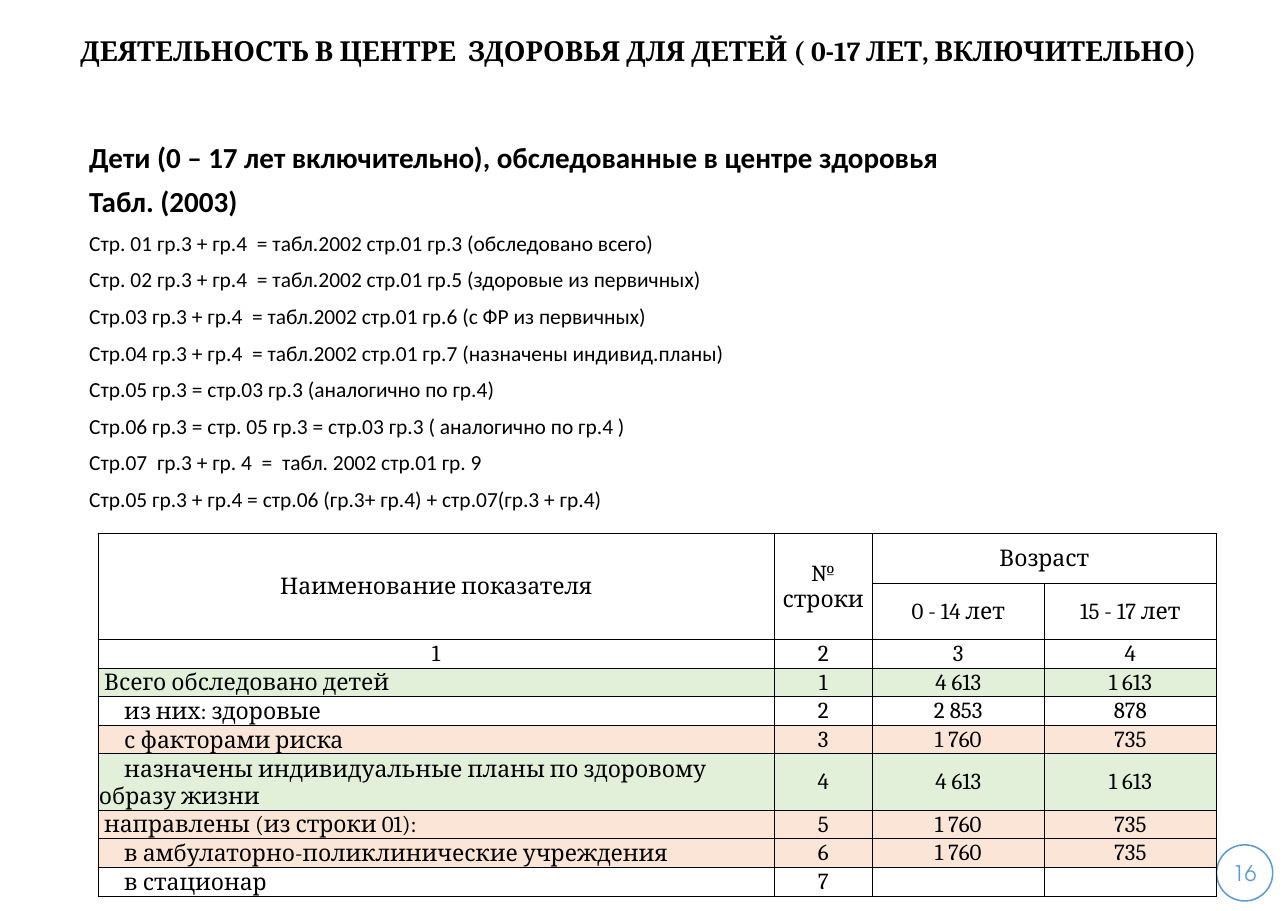
from dataclasses import dataclass

import lxml.etree
import pptx
import pptx.dml.color
import pptx.enum.shapes
import pptx.enum.text
import pptx.oxml.ns
import pptx.presentation
import pptx.slide
import pptx.table
import pptx.text.text
import pptx.util

Pt = pptx.util.Pt
RGBColor = pptx.dml.color.RGBColor
Align = pptx.enum.text.PP_ALIGN
Anchor = pptx.enum.text.MSO_ANCHOR
qn = pptx.oxml.ns.qn

BLACK = RGBColor(0x00, 0x00, 0x00)
BLUE = RGBColor(0x5B, 0x9B, 0xD5)
GREEN = RGBColor(0xE2, 0xF0, 0xD9)
PEACH = RGBColor(0xFB, 0xE5, 0xD6)

SERIF = "Cambria"
SANS = "Calibri"
ROUND = "TeX Gyre Adventor"

TITLE = "ДЕЯТЕЛЬНОСТЬ В ЦЕНТРЕ  ЗДОРОВЬЯ ДЛЯ ДЕТЕЙ ( 0-17 ЛЕТ, ВКЛЮЧИТЕЛЬНО"
HEADS = [
    "Дети (0 – 17 лет включительно), обследованные в центре здоровья",
    "Табл. (2003)",
]
RULES = [
    "Стр. 01 гр.3 + гр.4  = табл.2002 стр.01 гр.3 (обследовано всего)",
    "Стр. 02 гр.3 + гр.4  = табл.2002 стр.01 гр.5 (здоровые из первичных)",
    "Стр.03 гр.3 + гр.4  = табл.2002 стр.01 гр.6 (с ФР из первичных)",
    "Стр.04 гр.3 + гр.4  = табл.2002 стр.01 гр.7 (назначены индивид.планы)",
    "Стр.05 гр.3 = стр.03 гр.3 (аналогично по гр.4)",
    "Стр.06 гр.3 = стр. 05 гр.3 = стр.03 гр.3 ( аналогично по гр.4 )",
    "Стр.07  гр.3 + гр. 4  =  табл. 2002 стр.01 гр. 9",
    "Стр.05 гр.3 + гр.4 = стр.06 (гр.3+ гр.4) + стр.07(гр.3 + гр.4)",
]


@dataclass
class Entry:
    name: str
    young: str
    teen: str
    fill: RGBColor | None = None
    indent: float = 16.5
    height: float = 17.7


ENTRIES = [
    Entry("Всего обследовано детей", "4 613", "1 613", GREEN, 3.3),
    Entry("из них: здоровые", "2 853", "878"),
    Entry("с факторами риска", "1 760", "735", PEACH),
    Entry("назначены индивидуальные планы по здоровому образу жизни",
          "4 613", "1 613", GREEN, height=35.3),
    Entry("направлены (из строки 01):", "1 760", "735", PEACH, 3.3),
    Entry("в амбулаторно-поликлинические учреждения", "1 760", "735", PEACH),
    Entry("в стационар", "", ""),
]
HEADER = [
    ["Наименование показателя", "№ строки", "Возраст", ""],
    ["", "", "0 - 14 лет", "15 - 17 лет"],
    ["1", "2", "3", "4"],
]
WIDTHS = [442, 64, 112.5, 112.5]
HEIGHTS = [32.7, 35.3, 17.7]


def style(font: pptx.text.text.Font, face: str, size: float,
          color: RGBColor = BLACK, bold: bool = False) -> None:
    font.name = face
    font.size = Pt(size)
    font.bold = bold
    font.color.rgb = color


def inset(frame: pptx.text.text.TextFrame, left: float, top: float,
          right: float, base: float) -> None:
    frame.margin_left, frame.margin_top = Pt(left), Pt(top)
    frame.margin_right, frame.margin_bottom = Pt(right), Pt(base)
    frame.word_wrap = True


def add_title(slide: pptx.slide.Slide) -> None:
    box = slide.shapes.add_textbox(Pt(52.5), Pt(0), Pt(737.5), Pt(68.4))
    frame = box.text_frame
    inset(frame, 0, 3.6, 7.2, 3.6)
    frame.vertical_anchor = Anchor.MIDDLE
    para = frame.paragraphs[0]
    para.line_spacing = 0.9
    for text, face, bold in ((TITLE, SERIF, True), (")", ROUND, False)):
        run = para.add_run()
        run.text = text
        style(run.font, face, 18, bold=bold)


def add_body(slide: pptx.slide.Slide) -> None:
    box = slide.shapes.add_textbox(Pt(46.8), Pt(82), Pt(765.4), Pt(476))
    frame = box.text_frame
    inset(frame, 11.5, 11.5, 11.5, 11.5)
    for index, text in enumerate(HEADS + RULES):
        para = frame.add_paragraph() if index else frame.paragraphs[0]
        head = index < len(HEADS)
        para.text = text
        para.line_spacing = 0.9
        para.space_before = Pt(8.8 if index else 0)
        para.alignment = Align.LEFT if head else Align.JUSTIFY
        style(para.font, SANS, 19 if head else 14, bold=head)


def add_edges(cell: pptx.table._Cell) -> None:
    props = cell._tc.get_or_add_tcPr()
    for side in ("a:lnL", "a:lnR", "a:lnT", "a:lnB"):
        line = lxml.etree.SubElement(props, qn(side), w=str(Pt(0.5)))
        fill = lxml.etree.SubElement(line, qn("a:solidFill"))
        lxml.etree.SubElement(fill, qn("a:srgbClr"), val=str(BLACK))


def fill_cell(cell: pptx.table._Cell, text: str, fill: RGBColor | None = None,
              indent: float | None = None) -> None:
    cell.margin_left = cell.margin_top = cell.margin_right = Pt(0.7)
    cell.margin_bottom = Pt(0)
    cell.vertical_anchor = Anchor.MIDDLE if indent is None else Anchor.BOTTOM
    add_edges(cell)
    if fill is None:
        cell.fill.background()
    else:
        cell.fill.solid()
        cell.fill.fore_color.rgb = fill
    para = cell.text_frame.paragraphs[0]
    para.text = text
    para.alignment = Align.CENTER if indent is None else Align.LEFT
    if indent is not None:
        props = para._p.get_or_add_pPr()
        props.set("marL", "0")
        props.set("indent", str(Pt(indent)))
    style(para.font, SERIF, 15)
    if not text:
        lxml.etree.SubElement(para._p, qn("a:endParaRPr"), sz="1500")


def add_grid(slide: pptx.slide.Slide) -> None:
    tall = HEIGHTS + [entry.height for entry in ENTRIES]
    frame = slide.shapes.add_table(len(tall), len(WIDTHS), Pt(64), Pt(348.5),
                                   Pt(sum(WIDTHS)), Pt(sum(tall)))
    table = frame.table
    table.first_row = table.horz_banding = False
    for column, width in zip(table.columns, WIDTHS):
        column.width = Pt(width)
    for row, height in zip(table.rows, tall):
        row.height = Pt(height)
    for row, texts in enumerate(HEADER):
        for col, text in enumerate(texts):
            fill_cell(table.cell(row, col), text)
    for number, entry in enumerate(ENTRIES, 1):
        row = len(HEADER) + number - 1
        fill_cell(table.cell(row, 0), entry.name, entry.fill, entry.indent)
        for col, text in enumerate((str(number), entry.young, entry.teen), 1):
            fill_cell(table.cell(row, col), text, entry.fill)
    for col in (0, 1):
        table.cell(0, col).merge(table.cell(1, col))
    table.cell(0, 2).merge(table.cell(0, 3))


def add_badge(slide: pptx.slide.Slide) -> None:
    oval = pptx.enum.shapes.MSO_SHAPE.OVAL
    badge = slide.shapes.add_shape(oval, Pt(795), Pt(552.2), Pt(36.7), Pt(36.7))
    badge.shadow.inherit = False
    badge.fill.background()
    badge.line.color.rgb = BLUE
    badge.line.width = Pt(1)
    frame = badge.text_frame
    inset(frame, 0, 0, 0, 0)
    frame.vertical_anchor = Anchor.MIDDLE
    para = frame.paragraphs[0]
    para.text = "16"
    para.alignment = Align.CENTER
    style(para.font, ROUND, 14, BLUE)


def main() -> None:
    deck = pptx.Presentation()
    deck.slide_width, deck.slide_height = Pt(841.68), Pt(595.44)
    slide = deck.slides.add_slide(deck.slide_layouts[6])
    add_badge(slide)
    add_title(slide)
    add_body(slide)
    add_grid(slide)
    deck.save("out.pptx")


if __name__ == "__main__":
    main()
